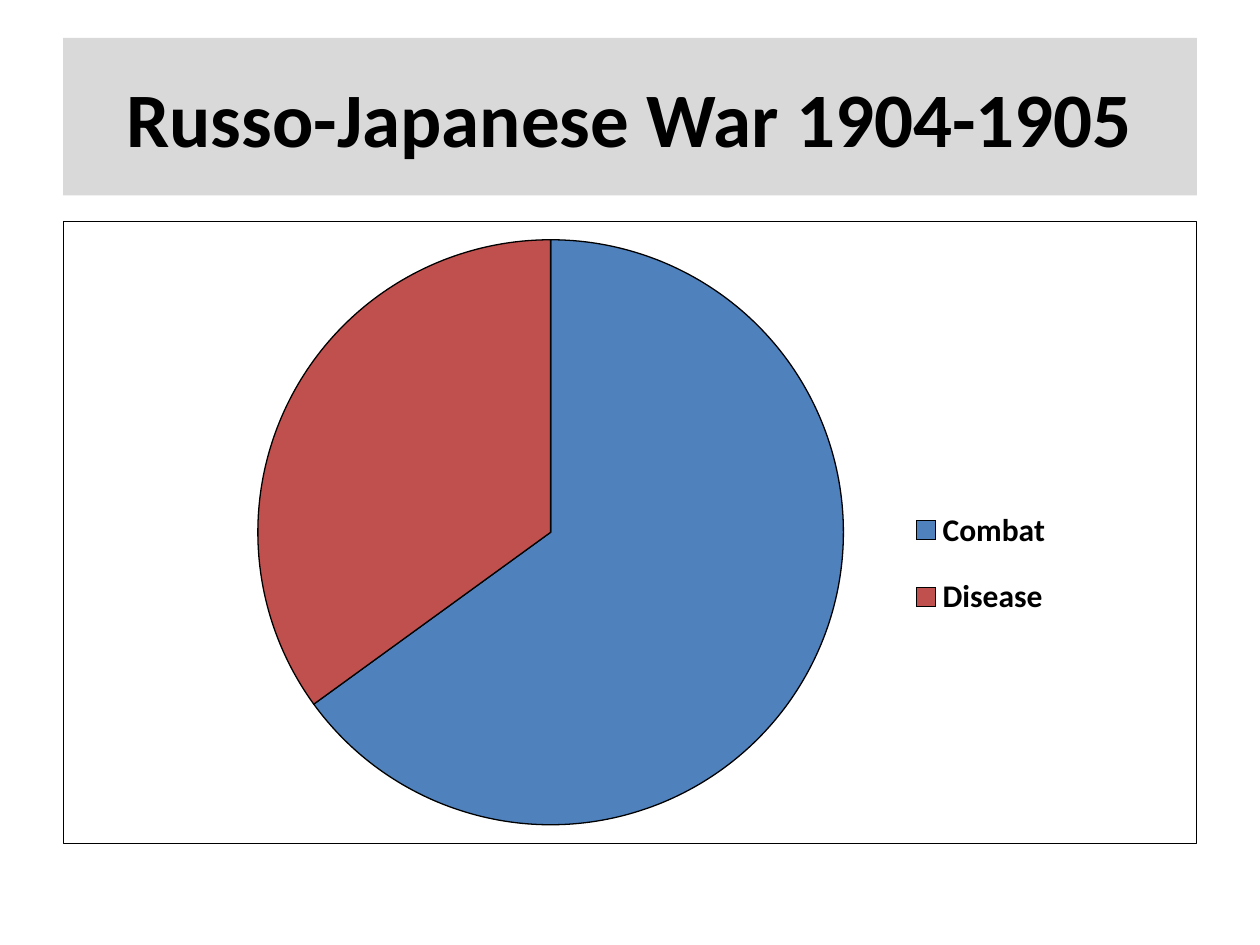
from dataclasses import dataclass

from lxml.etree import SubElement
from pptx import Presentation
from pptx.chart.chart import Chart
from pptx.chart.data import CategoryChartData
from pptx.dml.color import RGBColor
from pptx.enum.chart import XL_CHART_TYPE, XL_LEGEND_POSITION
from pptx.enum.text import MSO_ANCHOR, PP_ALIGN
from pptx.oxml import parse_xml
from pptx.oxml.ns import nsdecls, qn
from pptx.slide import Slide
from pptx.util import Inches, Pt

FONT = "Calibri"
BLACK = "000000"
LEFT, WIDTH = Inches(0.5), Inches(9)


@dataclass(frozen=True)
class Cause:
    name: str
    share: int
    color: str


@dataclass(frozen=True)
class Area:
    """A rectangle in fractions of the chart's size."""
    x: float
    y: float
    w: float
    h: float


CAUSES = [Cause("Combat", 65, "4F81BD"), Cause("Disease", 35, "C0504D")]
PIE_AREA = Area(0.17, 0.03, 0.52, 0.94)
LEGEND_AREA = Area(0.74, 0.42, 0.14, 0.26)


def color(value: str) -> RGBColor:
    return RGBColor.from_string(value)


def make_layout(area: Area, inner: bool = False):
    layout = parse_xml(f"<c:layout {nsdecls('c')}><c:manualLayout/></c:layout>")
    settings = {"layoutTarget": "inner"} if inner else {}
    settings |= {"xMode": "edge", "yMode": "edge"}
    settings |= {side: str(getattr(area, side)) for side in "xywh"}
    for tag, value in settings.items():
        SubElement(layout[0], qn(f"c:{tag}")).set("val", value)
    return layout


def place_parts(chart: Chart) -> None:
    """Fix the places of pie and legend."""
    plot_area = chart._chartSpace.chart.plotArea
    legend = chart.legend._element
    for parent in (plot_area, legend):
        for old_layout in parent.findall(qn("c:layout")):
            parent.remove(old_layout)
    plot_area.insert(0, make_layout(PIE_AREA, inner=True))
    legend.find(qn("c:legendPos")).addnext(make_layout(LEGEND_AREA))


def add_border(chart: Chart) -> None:
    border = parse_xml(
        f"<c:spPr {nsdecls('c', 'a')}><a:noFill/><a:ln w='{Pt(0.75)}'><a:solidFill>"
        f"<a:srgbClr val='{BLACK}'/></a:solidFill></a:ln></c:spPr>"
    )
    chart._chartSpace.chart.addnext(border)


def add_title(slide: Slide, text: str) -> None:
    title = slide.shapes.title
    title.left, title.top, title.width, title.height = LEFT, Inches(0.3), WIDTH, Inches(1.25)
    title.fill.solid()
    title.fill.fore_color.rgb = color("D9D9D9")
    title.text_frame.text = text
    title.text_frame.vertical_anchor = MSO_ANCHOR.MIDDLE
    paragraph = title.text_frame.paragraphs[0]
    paragraph.alignment = PP_ALIGN.CENTER
    paragraph.font.name = FONT
    paragraph.font.size = Pt(44)
    paragraph.font.bold = True
    paragraph.font.color.rgb = color(BLACK)


def add_pie(slide: Slide, causes: list[Cause]) -> None:
    data = CategoryChartData()
    data.categories = [cause.name for cause in causes]
    data.add_series("Series 1", [cause.share for cause in causes])
    chart = slide.shapes.add_chart(
        XL_CHART_TYPE.PIE, LEFT, Inches(1.75), WIDTH, Inches(4.95), data
    ).chart
    chart.has_title = False
    chart.has_legend = True
    chart.legend.position = XL_LEGEND_POSITION.RIGHT
    chart.legend.include_in_layout = False
    for font in (chart.font, chart.legend.font):
        font.name = FONT
        font.size = Pt(18)
        font.color.rgb = color(BLACK)
    chart.legend.font.bold = True

    plot = chart.plots[0]
    plot.vary_by_categories = True
    for index, cause in enumerate(causes):
        slice_format = plot.series[0].points[index].format
        slice_format.fill.solid()
        slice_format.fill.fore_color.rgb = color(cause.color)
        slice_format.line.color.rgb = color(BLACK)
        slice_format.line.width = Pt(0.75)
    place_parts(chart)
    add_border(chart)


def main() -> None:
    presentation = Presentation()
    presentation.slide_width, presentation.slide_height = Inches(10), Inches(7.5)
    slide = presentation.slides.add_slide(presentation.slide_layouts[5])
    add_title(slide, "Russo-Japanese War 1904-1905")
    add_pie(slide, CAUSES)
    presentation.save("out.pptx")


if __name__ == "__main__":
    main()
